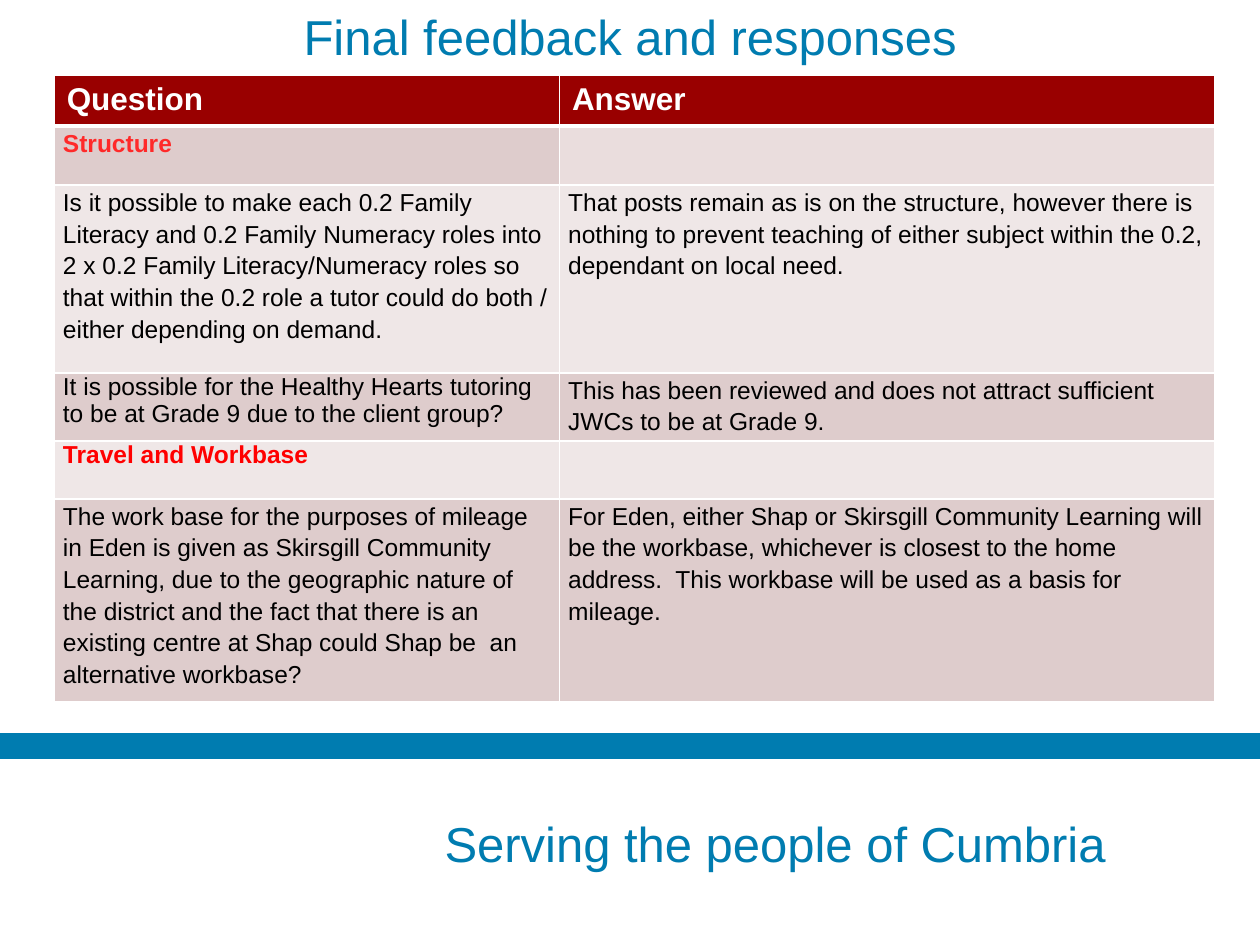
from lxml.etree import SubElement
from pptx import Presentation
from pptx.dml.color import RGBColor
from pptx.enum.shapes import MSO_CONNECTOR as Connector
from pptx.enum.text import MSO_ANCHOR as Anchor, MSO_AUTO_SIZE as AutoSize, PP_ALIGN as Align
from pptx.oxml.ns import qn
from pptx.util import Inches, Pt

COLORS = {
    "blue": "007CB0", "header": "990000", "white": "FFFFFF", "black": "000000",
    "dark": "DECCCC", "middle": "EADDDD", "light": "EFE7E7",
    "structure": "FF2929", "travel": "FF0000",
}
COLUMNS = [4.01, 5.2]
HEADINGS = ["Question", "Answer"]
ROWS = [
    (0.47, ("dark", "middle"), "structure", (1.15, 1), ("Structure", "")),
    (1.49, ("light", "light"), None, (1.15, 1.15), (
        "Is it possible to make each 0.2 Family Literacy and 0.2 Family Numeracy roles into "
        "2 x 0.2 Family Literacy/Numeracy roles so that within the 0.2 role a tutor could do "
        "both / either depending on demand.",
        "That posts remain as is on the structure, however there is nothing to prevent "
        "teaching of either subject within the 0.2, dependant on local need.")),
    (0.54, ("dark", "dark"), None, (1, 1.15), (
        "It is possible for the Healthy Hearts tutoring to be at Grade 9 due to the client group?",
        "This has been reviewed and does not attract sufficient JWCs to be at Grade 9.")),
    (0.46, ("light", "light"), "travel", (1, 1), ("Travel and Workbase", "")),
    (1.61, ("dark", "dark"), None, (1.15, 1.15), (
        "The work base for the purposes of mileage in Eden is given as Skirsgill Community "
        "Learning, due to the geographic nature of the district and the fact that there is an "
        "existing centre at Shap could Shap be  an alternative workbase?",
        "For Eden, either Shap or Skirsgill Community Learning will be the workbase, whichever "
        "is closest to the home address.  This workbase will be used as a basis for mileage.")),
]
HEADER_HEIGHT = 0.4


def color(name):
    return RGBColor.from_string(COLORS[name])


def add_run(paragraph, text, size, color_name, bold=False):
    run = paragraph.add_run()
    run.text = text
    run.font.name = "Arial"
    run.font.size = Pt(size)
    run.font.bold = bold
    run.font.color.rgb = color(color_name)


def set_borders(cell, bottom_width):
    properties = cell._tc.get_or_add_tcPr()
    widths = {"lnL": 1, "lnR": 1, "lnT": 1, "lnB": bottom_width}
    for position, (tag, width) in enumerate(widths.items()):
        line = SubElement(properties, qn(f"a:{tag}"), w=str(Pt(width)))
        fill = SubElement(line, qn("a:solidFill"))
        SubElement(fill, qn("a:srgbClr"), val=COLORS["white"])
        properties.insert(position, line)


def fill_cell(cell, text, fill, size, text_color, bold, spacing, insets, bottom_width=1):
    cell.fill.solid()
    cell.fill.fore_color.rgb = color(fill)
    cell.margin_left = cell.margin_right = Inches(insets[0])
    cell.margin_top = cell.margin_bottom = Inches(insets[1])
    set_borders(cell, bottom_width)
    paragraph = cell.text_frame.paragraphs[0]
    if text:
        paragraph.line_spacing = spacing
        add_run(paragraph, text, size, text_color, bold)
    else:
        paragraph.font.size = Pt(size)


def place_title(slide, left, top, width, height):
    title = slide.shapes.title
    title.left, title.top, title.width, title.height = left, top, width, height
    frame = title.text_frame
    frame.auto_size = AutoSize.NONE
    frame.vertical_anchor = Anchor.MIDDLE
    paragraph = frame.paragraphs[0]
    paragraph.alignment = Align.CENTER
    add_run(paragraph, "Final feedback and responses", 28, "blue")


def place_feedback_table(slide, left, top, width, height):
    heights = [HEADER_HEIGHT] + [row[0] for row in ROWS]
    table = slide.shapes.add_table(
        len(heights), len(COLUMNS), left, top, width, height).table
    for column, share in zip(table.columns, COLUMNS):
        column.width = int(width * share / sum(COLUMNS))
    for row, share in zip(table.rows, heights):
        row.height = int(height * share / sum(heights))
    for index, heading in enumerate(HEADINGS):
        fill_cell(table.cell(0, index), heading, "header", 18, "white", True, 1, (0.1, 0.05), 3)
    for number, (_, fills, accent, spacings, texts) in enumerate(ROWS, 1):
        for index, (text, fill, spacing) in enumerate(zip(texts, fills, spacings)):
            fill_cell(table.cell(number, index), text, fill, 14, accent or "black",
                      bool(accent), spacing, (0.07, 0))


def place_footer(slide, left, top, width, height):
    rule = slide.shapes.add_connector(Connector.STRAIGHT, left + width, top, left, top)
    rule.line.color.rgb = color("blue")
    rule.line.width = Pt(15)
    SubElement(rule._element.spPr, qn("a:effectLst"))
    motto = slide.shapes.add_textbox(
        left + int(width * 0.343), top + int(height * 0.31),
        int(width * 0.591), int(height * 0.36))
    motto.text_frame.word_wrap = True
    add_run(motto.text_frame.paragraphs[0], "Serving the people of Cumbria", 28, "blue")


def main():
    presentation = Presentation()
    presentation.slide_width, presentation.slide_height = Inches(10), Inches(7.5)
    slide = presentation.slides.add_slide(presentation.slide_layouts[5])
    place_footer(slide, 0, Inches(5.92), Inches(10), Inches(1.58))
    place_title(slide, Inches(0.75), Inches(0.05), Inches(8.5), Inches(0.47))
    place_feedback_table(slide, Inches(0.43), Inches(0.6), Inches(9.21), Inches(4.97))
    presentation.save("out.pptx")


if __name__ == "__main__":
    main()
